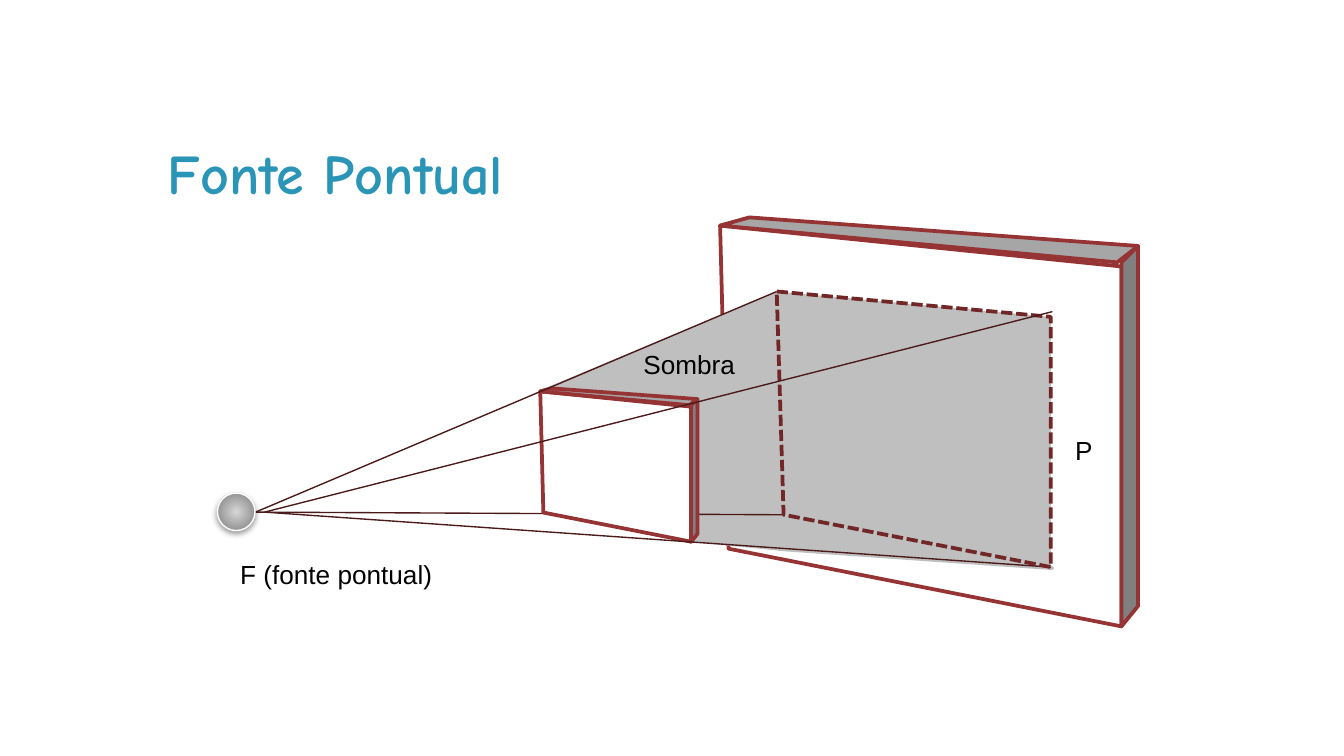
from pptx import Presentation
from pptx.dml.color import RGBColor as RGB
from pptx.enum.dml import MSO_LINE as Dash
from pptx.enum.shapes import MSO_CONNECTOR as Link, MSO_SHAPE as Shape
from pptx.enum.text import MSO_ANCHOR as Anchor
from pptx.oxml import parse_xml
from pptx.oxml.ns import nsdecls, qn
from pptx.util import Cm, Pt

HUE = {
    "title": "2A95B7", "text": "000000", "white": "FFFFFF",
    "edge": "963334", "dash": "712627", "ray": "4B1A1A",
    "shade": "BFBFBF", "side": "808080", "top": "A6A6A6",
    "glow": "D7D7D7", "rim": "797979",
}

# Faces of a slab, as fractions of its box
FACES = [
    ("white", [(0, 0.02), (0.96, 0.12), (0.96, 1), (0.02, 0.81)]),
    ("side", [(1, 0.07), (1, 0.95), (0.96, 1), (0.96, 0.11)]),
    ("top", [(1, 0.07), (0.07, 0), (0, 0.02), (0.95, 0.11)]),
]


def color(name):
    return RGB.from_string(HUE[name])


def outline(line, name, width):
    line.color.rgb = color(name)
    line.width = Pt(width)


def panel(slide, pts, fill, edge, dash=None):
    pts = [(Cm(x), Cm(y)) for x, y in pts]
    pen = slide.shapes.build_freeform(*pts[0], scale=1.0)
    pen.add_line_segments(pts[1:], close=True)
    shape = pen.convert_to_shape()
    shape.shadow.inherit = False
    shape.fill.solid()
    shape.fill.fore_color.rgb = color(fill)
    outline(shape.line, edge, 2)
    if dash:
        shape.line.dash_style = dash
    shape.line._ln.append(parse_xml(f"<a:round {nsdecls('a')}/>"))


def slab(slide, x, y, w, h):
    for fill, pts in FACES:
        panel(slide, [(x + u * w, y + v * h) for u, v in pts], fill, "edge")


def ray(slide, start, end):
    line = slide.shapes.add_connector(
        Link.STRAIGHT, *[Cm(v) for v in (*start, *end)])
    outline(line.line, "ray", 0.75)
    line._element.spPr.append(parse_xml(f"<a:effectLst {nsdecls('a')}/>"))


def label(slide, text, x, y, w, h, font="Arial", size=14, hue="text",
          bold=False, wrap=False):
    box = slide.shapes.add_textbox(Cm(x), Cm(y), Cm(w), Cm(h))
    frame = box.text_frame
    frame.word_wrap = wrap
    frame.vertical_anchor = Anchor.MIDDLE
    run = frame.paragraphs[0].add_run()
    run.text = text
    run.font.name, run.font.size, run.font.bold = font, Pt(size), bold
    run.font.color.rgb = color(hue)


def lamp(slide, x, y, size):
    ball = slide.shapes.add_shape(Shape.OVAL, Cm(x), Cm(y), Cm(size), Cm(size))
    ball.fill.gradient()
    for stop, name in zip(ball.fill.gradient_stops, ("glow", "rim")):
        stop.color.rgb = color(name)
    # Radial gradient from the centre
    props = ball._element.spPr
    grad = props.find(qn("a:gradFill"))
    grad.replace(grad.find(qn("a:lin")), parse_xml(
        f'<a:path {nsdecls("a")} path="circle"><a:fillToRect l="50000" '
        't="50000" r="50000" b="50000"/></a:path>'))
    outline(ball.line, "white", 0.75)
    # Soft shadow below
    props.append(parse_xml(
        f'<a:effectLst {nsdecls("a")}><a:outerShdw blurRad="{Pt(3.1)}" '
        f'dist="{Pt(1.6)}" dir="5400000" rotWithShape="0">'
        f'<a:srgbClr val="{HUE["text"]}"><a:alpha val="38000"/></a:srgbClr>'
        '</a:outerShdw></a:effectLst>'))


def scene(slide, x, y):
    def at(*pts):
        return [(x + u, y + v) for u, v in pts]

    near, far = at((0.72, 5.57), (0.89, 5.57))
    cast = at((10.57, 1.4), (15.75, 1.88), (15.75, 6.61), (10.7, 5.62))

    # Wall and the dark space in front of it
    slab(slide, x + 9.5, y, 7.9, 7.73)
    floor = at((10.77, 6.28), (8.97, 6.1), (10.6, 5.57), (15.78, 6.63))
    back = at((8.79, 6.1), (6.28, 3.23), (10.6, 1.43), (10.77, 5.57))
    for pts in (floor, back):
        panel(slide, pts, "shade", "shade")

    # Block, rays and cast shadow, from back to front
    ray(slide, near, cast[3])
    slab(slide, x + 6.1, y + 3.23, 2.97, 2.9)
    ray(slide, far, cast[2])
    ray(slide, near, cast[0])
    panel(slide, cast, "shade", "dash", Dash.SQUARE_DOT)
    ray(slide, far, (x + 15.78, y + 1.78))

    # Labels and light source
    for text, u, v, w in [("Sombra", 7.8, 2.32, 2.46), ("P", 15.96, 3.94, 0.84),
                          ("F (fonte pontual)", 0.18, 6.28, 4.67)]:
        label(slide, text, x + u, y + v, w, 0.91)
    lamp(slide, x, y + 5.21, 0.71)


def main():
    deck = Presentation()
    deck.slide_width, deck.slide_height = Cm(25.4), Cm(14.29)
    slide = deck.slides.add_slide(deck.slide_layouts[6])
    scene(slide, 4.11, 4.11)
    label(slide, "Fonte Pontual", 2.92, 2.21, 19.51, 2.08,
          "Comic Neue", 30, "title", bold=True, wrap=True)
    deck.save("out.pptx")


if __name__ == "__main__":
    main()
